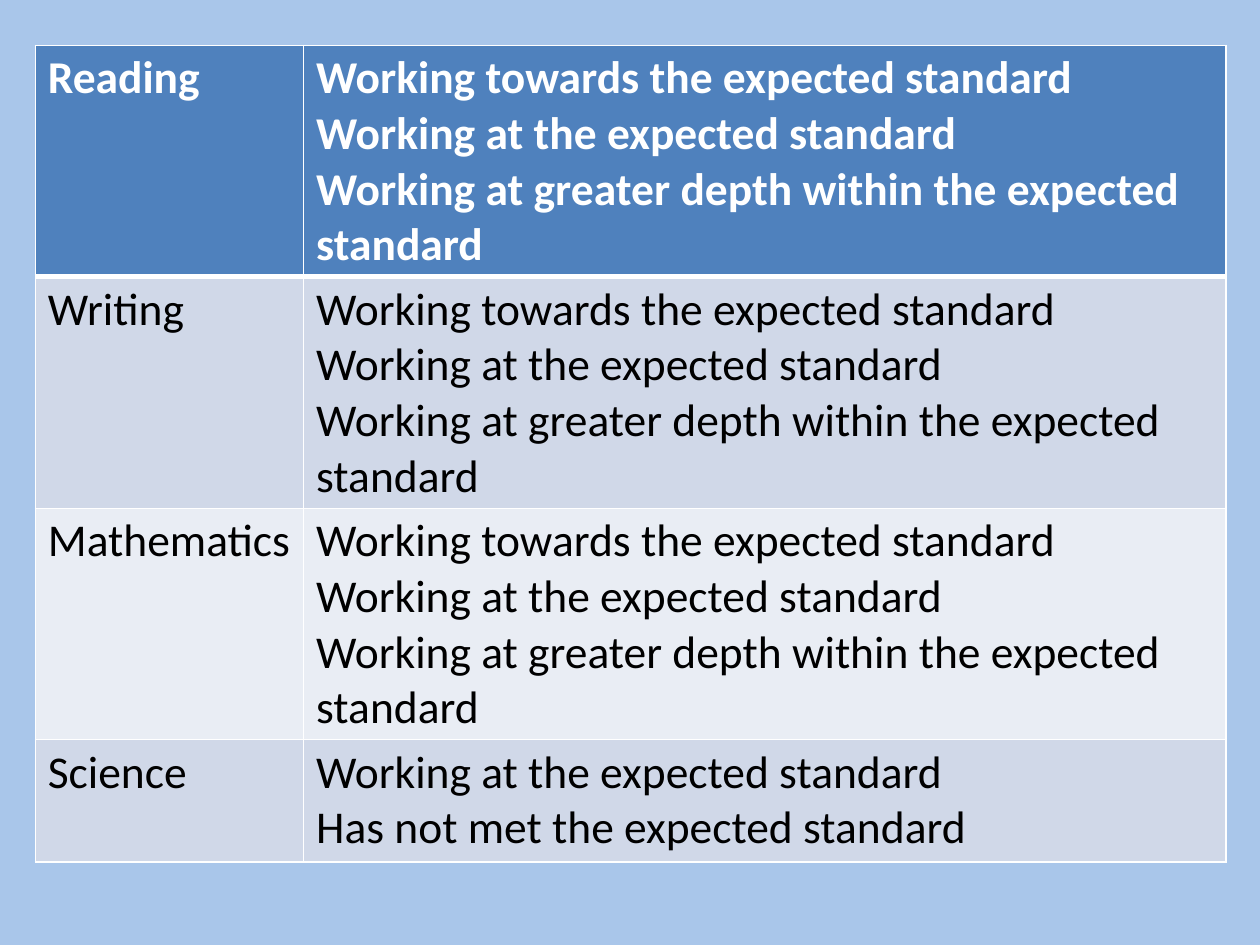
"""Build a slide with a table of attainment levels by subject."""
from dataclasses import dataclass

import lxml.etree
import pptx
import pptx.dml.color
import pptx.oxml.ns
import pptx.table
import pptx.util

Inches = pptx.util.Inches
Pt = pptx.util.Pt
HUES = {
    "back": "A9C6EA",
    "head": "4F81BD",
    "dark": "D0D8E8",
    "light": "E9EDF4",
    "white": "FFFFFF",
    "black": "000000",
}
MET = "Working at the expected standard"
LEVELS = (
    "Working towards the expected standard",
    MET,
    "Working at greater depth within the expected standard",
)


@dataclass
class Subject:
    """A table row with its levels and look."""
    name: str
    levels: tuple[str, ...]
    height: float
    fill: str
    head: bool = False


SUBJECTS = [
    Subject("Reading", LEVELS, 1.83, "head", True),
    Subject("Writing", LEVELS, 1.83, "dark"),
    Subject("Mathematics", LEVELS, 1.83, "light"),
    Subject("Science", (MET, "Has not met the expected standard"), 0.97, "dark"),
]


def hue(name: str) -> pptx.dml.color.RGBColor:
    """Look up a colour by name."""
    return pptx.dml.color.RGBColor.from_string(HUES[name])


def add_edge(cell: pptx.table._Cell, side: str, width: float, place: int) -> None:
    """Add a white border to one side of a cell."""
    qn = pptx.oxml.ns.qn
    edge = lxml.etree.Element(qn(f"a:ln{side}"), w=str(Pt(width)))
    fill = lxml.etree.SubElement(edge, qn("a:solidFill"))
    lxml.etree.SubElement(fill, qn("a:srgbClr"), val=HUES["white"])
    cell._tc.get_or_add_tcPr().insert(place, edge)


def fill_cell(cell: pptx.table._Cell, lines: tuple[str, ...], row: Subject, top: float) -> None:
    """Write and style one cell."""
    cell.text = "\n".join(lines)
    cell.margin_top, cell.margin_bottom = Inches(0.04), Inches(0.03)
    for para in cell.text_frame.paragraphs:
        font = para.font
        font.name, font.size, font.bold = "Calibri", Pt(26), row.head
        font.color.rgb = hue("white" if row.head else "black")
    cell.fill.solid()
    cell.fill.fore_color.rgb = hue(row.fill)
    widths = {"L": 1, "R": 1, "T": top, "B": 3 if row.head else 1}
    for place, (side, width) in enumerate(widths.items()):
        add_edge(cell, side, width, place)


def main() -> None:
    """Create and save the slide."""
    deck = pptx.Presentation()
    deck.slide_width, deck.slide_height = Inches(10), Inches(7.5)
    slide = deck.slides.add_slide(deck.slide_layouts[6])
    slide.background.fill.solid()
    slide.background.fill.fore_color.rgb = hue("back")

    high = sum(row.height for row in SUBJECTS)
    table = slide.shapes.add_table(
        len(SUBJECTS), 2, Inches(0.28), Inches(0.36), Inches(9.45), Inches(high)
    ).table
    for column, width in zip(table.columns, (2.13, 7.32)):
        column.width = Inches(width)
    top = 1
    for index, row in enumerate(SUBJECTS):
        table.rows[index].height = Inches(row.height)
        for column, lines in enumerate(((row.name,), row.levels)):
            fill_cell(table.cell(index, column), lines, row, top)
        top = 3 if row.head else 1
    deck.save("out.pptx")


if __name__ == "__main__":
    main()
